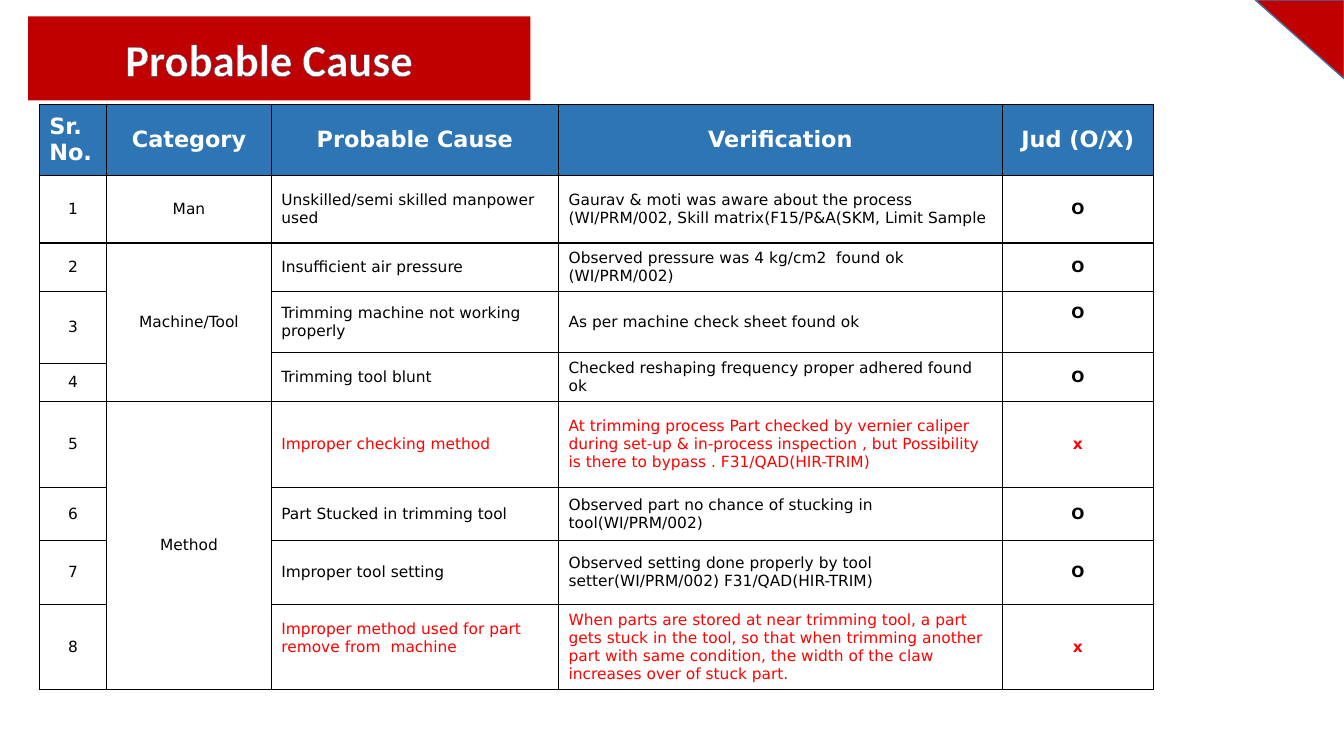
from lxml import etree
from pptx import Presentation
from pptx.dml.color import RGBColor
from pptx.enum.shapes import MSO_SHAPE
from pptx.enum.text import MSO_ANCHOR, MSO_AUTO_SIZE, PP_ALIGN
from pptx.oxml import parse_xml
from pptx.oxml.ns import nsdecls, qn
from pptx.util import Inches, Pt

RED = RGBColor(0xC0, 0x00, 0x00)
ALERT = RGBColor(0xFF, 0x00, 0x00)
BLUE = RGBColor(0x2E, 0x75, 0xB6)
EDGE = RGBColor(0x43, 0x73, 0x9E)
WHITE = RGBColor(0xFF, 0xFF, 0xFF)
BLACK = RGBColor(0x00, 0x00, 0x00)


def line_xml(tag, color, width=Pt(1)):
    return parse_xml(
        f'<a:{tag} {nsdecls("a")} w="{width}"><a:solidFill>'
        f'<a:srgbClr val="{color}"/></a:solidFill></a:{tag}>')


def add_text(p, text, font, size, color, bold):
    r = p.add_run()
    r.text = text
    r.font.name = font
    r.font.size = Pt(size)
    r.font.color.rgb = color
    r.font.bold = bold
    return r


prs = Presentation()
prs.slide_width = Inches(13.33)
prs.slide_height = Inches(7.5)
s = prs.slides.add_slide(prs.slide_layouts[5])

corner = s.shapes.add_shape(MSO_SHAPE.RIGHT_TRIANGLE, Inches(12.45), 0, Inches(0.88), Inches(0.78))
corner.rotation = 180
corner.shadow.inherit = False
corner.fill.solid()
corner.fill.fore_color.rgb = RED
corner.line.color.rgb = EDGE
corner.line.width = Pt(1)

title = s.shapes.title
title.left, title.top = Inches(0.28), Inches(0.26)
title.width, title.height = Inches(4.98), Inches(0.64)
title.fill.solid()
title.fill.fore_color.rgb = RED
tf = title.text_frame
tf.word_wrap = True
tf.auto_size = MSO_AUTO_SIZE.SHAPE_TO_FIT_TEXT
tf.vertical_anchor = MSO_ANCHOR.MIDDLE
tf.margin_right = Inches(0.3)
p = tf.paragraphs[0]
p.alignment = PP_ALIGN.CENTER
r = add_text(p, "Probable Cause", "Calibri", 32, WHITE, True)
r.font._element.insert(0, line_xml("ln", "3A5274"))

col_widths = [0.67, 1.63, 2.85, 4.4, 1.5]
row_heights = [0.7, 0.67, 0.48, 0.61, 0.11, 0.37, 0.86, 0.52, 0.64, 0.84]
rows = [
    ["Sr. No.", "Category", "Probable Cause", "Verification", "Jud (O/X)"],
    ["1", "Man", "Unskilled/semi skilled manpower used",
     "Gaurav & moti was aware about the process (WI/PRM/002, Skill matrix(F15/P&A(SKM, Limit Sample", "O"],
    ["2", "Machine/Tool", "Insufficient air pressure",
     "Observed pressure was 4 kg/cm2  found ok (WI/PRM/002)", "O"],
    ["3", "", "Trimming machine not working properly", "As per machine check sheet found ok", "O"],
    ["", "", "Trimming tool blunt", "Checked reshaping frequency proper adhered found ok", "O"],
    ["4", "", "", "", ""],
    ["5", "Method", "Improper checking method",
     "At trimming process Part checked by vernier caliper during set-up & in-process inspection , "
     "but Possibility is there to bypass . F31/QAD(HIR-TRIM)", "x"],
    ["6", "", "Part Stucked in trimming tool", "Observed part no chance of stucking in tool(WI/PRM/002)", "O"],
    ["7", "", "Improper tool setting",
     "Observed setting done properly by tool setter(WI/PRM/002) F31/QAD(HIR-TRIM)", "O"],
    ["8", "", "Improper method used for part remove from  machine",
     "When parts are stored at near trimming tool, a part gets stuck in the tool, so that when trimming "
     "another part with same condition, the width of the claw increases over of stuck part.", "x"],
]

table = s.shapes.add_table(len(rows), len(col_widths), Inches(0.39), Inches(1.04),
                           Inches(sum(col_widths)), Inches(sum(row_heights))).table
table.first_row = False
table.horz_banding = False
for column, width in zip(table.columns, col_widths):
    column.width = Inches(width)
for row, height in zip(table.rows, row_heights):
    row.height = Inches(height)

for i, row in enumerate(rows):
    header = i == 0
    for j, text in enumerate(row):
        cell = table.cell(i, j)
        cell.vertical_anchor = MSO_ANCHOR.MIDDLE
        cell.fill.solid()
        cell.fill.fore_color.rgb = BLUE if header else WHITE
        tcPr = cell._tc.get_or_add_tcPr()
        for k, side in enumerate(["lnL", "lnR", "lnT", "lnB"]):
            tcPr.insert(k, line_xml(side, BLACK))
        p = cell.text_frame.paragraphs[0]
        if not text:
            p.font.size = Pt(1)
            continue
        left = j == 0 if header else j in (2, 3)
        p.alignment = PP_ALIGN.LEFT if left else PP_ALIGN.CENTER
        color = WHITE if header else ALERT if row[4] == "x" and j >= 2 else BLACK
        add_text(p, text, "DejaVu Sans", 16 if header else 11, color, header or j == 4)

for i, j in [(3, 4), (9, 2)]:
    table.cell(i, j).margin_bottom = Inches(0.23)

for top, col, bottom in [(2, 1, 5), (3, 0, 4), (4, 2, 5), (4, 3, 5), (4, 4, 5), (6, 1, 9)]:
    table.cell(top, col).merge(table.cell(bottom, col))

prs.save("out.pptx")
